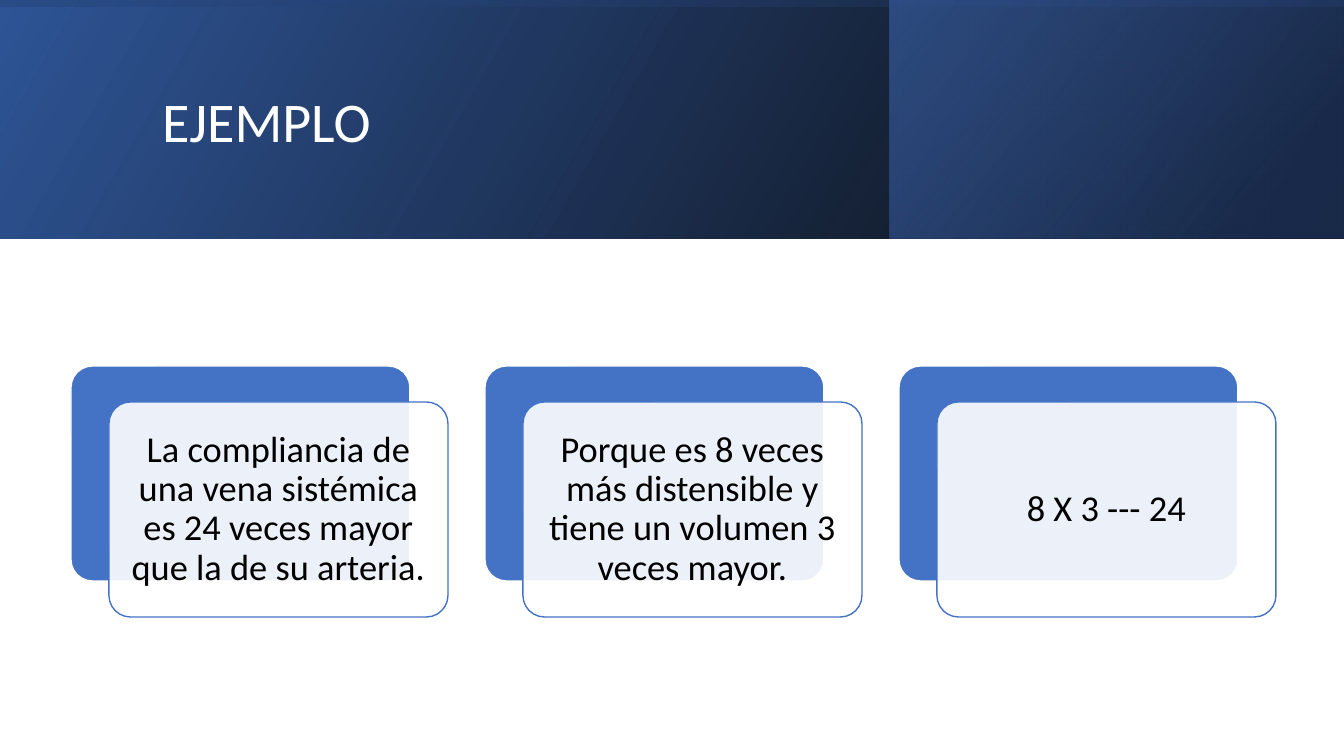
import dataclasses

import pptx
import pptx.dml.color
import pptx.enum.shapes
import pptx.enum.text
import pptx.oxml
import pptx.oxml.ns
import pptx.util

EMU_PER_PX = 914400 / 100.8
SLIDE_W, SLIDE_H = 1344, 756
BANNER_H = 239


@dataclasses.dataclass(frozen=True)
class Theme:
    font: str = "Calibri"
    title_size: int = 40
    body_size: int = 26
    white: str = "FFFFFF"
    black: str = "000000"
    blue: str = "4472C4"
    deep_blue: str = "2F5597"
    navy: str = "203864"


THEME = Theme()


@dataclasses.dataclass(frozen=True)
class Box:
    left: float
    top: float
    width: float
    height: float

    def emu(self) -> list[int]:
        return [px(v) for v in (self.left, self.top, self.width, self.height)]


@dataclasses.dataclass(frozen=True)
class Stop:
    position: int
    color: str
    opacity: int = 100


@dataclasses.dataclass(frozen=True)
class Band:
    box: Box
    angle: int
    stops: tuple[Stop, ...]
    rotation: int = 0


BANDS = (
    Band(Box(0, 0, SLIDE_W, BANNER_H), 330,
         (Stop(0, THEME.black, 96), Stop(100, THEME.deep_blue))),
    Band(Box(890, 0, 453, BANNER_H), 320,
         (Stop(19, THEME.navy, 68), Stop(100, THEME.blue, 48))),
    Band(Box((SLIDE_W - BANNER_H) / 2, (BANNER_H - SLIDE_W) / 2, BANNER_H, SLIDE_W), 350,
         (Stop(23, THEME.deep_blue, 16), Stop(99, THEME.black, 45)), rotation=270),
)

TITLE_BOX = Box(152, 38, 1072, 173)
STATEMENTS = (
    "La compliancia de una vena sistémica es 24 veces mayor que la de su arteria.",
    "Porque es 8 veces más distensible y tiene un volumen 3 veces mayor.",
    "8 X 3 --- 24",
)
CARD_LEFT, CARD_TOP, CARD_W, CARD_H = 71, 366, 339, 215
CARD_PITCH = 414
FRONT_DX, FRONT_DY = 38, 36
CARD_INSET = 11


def px(value: float) -> int:
    return round(value * EMU_PER_PX)


def rgb(color: str) -> pptx.dml.color.RGBColor:
    return pptx.dml.color.RGBColor.from_string(color)


def write(frame, text: str, *, size: int, color: str, align) -> None:
    frame.word_wrap = True
    frame.vertical_anchor = pptx.enum.text.MSO_ANCHOR.MIDDLE
    paragraph = frame.paragraphs[0]
    paragraph.alignment = align
    paragraph.line_spacing = 0.9
    run = paragraph.add_run()
    run.text = text
    run.font.name = THEME.font
    run.font.size = pptx.util.Pt(size)
    run.font.color.rgb = rgb(color)


def draw_band(shapes, band: Band) -> None:
    """Draw a mirrored rectangle with a gradient of translucent stops."""
    rectangle = shapes.add_shape(pptx.enum.shapes.MSO_SHAPE.RECTANGLE, *band.box.emu())
    rectangle.shadow.inherit = False
    rectangle.line.fill.background()
    rectangle.rotation = band.rotation
    properties = rectangle._element.spPr
    properties.xfrm.set("flipH", "1")
    stops = "".join(
        f'<a:gs pos="{s.position * 1000}"><a:srgbClr val="{s.color}">'
        f'<a:alpha val="{s.opacity * 1000}"/></a:srgbClr></a:gs>'
        for s in band.stops
    )
    gradient = pptx.oxml.parse_xml(
        f'<a:gradFill {pptx.oxml.ns.nsdecls("a")} rotWithShape="1"><a:gsLst>{stops}</a:gsLst>'
        f'<a:lin ang="{band.angle * 60000}" scaled="0"/></a:gradFill>'
    )
    properties.find(pptx.oxml.ns.qn("a:prstGeom")).addnext(gradient)


def draw_panel(shapes, box: Box, *, fill: str, line: str, opacity: int = 100):
    panel = shapes.add_shape(pptx.enum.shapes.MSO_SHAPE.ROUNDED_RECTANGLE, *box.emu())
    panel.adjustments[0] = 0.1
    panel.shadow.inherit = False
    panel.fill.solid()
    panel.fill.fore_color.rgb = rgb(fill)
    panel.line.color.rgb = rgb(line)
    panel.line.width = pptx.util.Pt(1)
    if opacity < 100:
        color = panel._element.spPr.find(
            f'{pptx.oxml.ns.qn("a:solidFill")}/{pptx.oxml.ns.qn("a:srgbClr")}')
        color.append(pptx.oxml.parse_xml(
            f'<a:alpha {pptx.oxml.ns.nsdecls("a")} val="{opacity * 1000}"/>'))
    return panel


def draw_card(shapes, left: int, statement: str) -> None:
    """Draw a solid panel and, shifted over it, a translucent one with the statement."""
    draw_panel(shapes, Box(left, CARD_TOP, CARD_W, CARD_H), fill=THEME.blue, line=THEME.white)
    front = draw_panel(
        shapes, Box(left + FRONT_DX, CARD_TOP + FRONT_DY, CARD_W, CARD_H),
        fill=THEME.white, line=THEME.blue, opacity=90)
    frame = front.text_frame
    frame.margin_left = frame.margin_right = px(CARD_INSET)
    frame.margin_top = frame.margin_bottom = px(CARD_INSET)
    write(frame, statement, size=THEME.body_size, color=THEME.black,
          align=pptx.enum.text.PP_ALIGN.CENTER)


def main() -> None:
    deck = pptx.Presentation()
    deck.slide_width, deck.slide_height = px(SLIDE_W), px(SLIDE_H)
    slide = deck.slides.add_slide(deck.slide_layouts.get_by_name("Title Only"))

    for band in BANDS:
        draw_band(slide.shapes, band)

    heading = slide.shapes.title
    heading.left, heading.top, heading.width, heading.height = TITLE_BOX.emu()
    write(heading.text_frame, "EJEMPLO", size=THEME.title_size, color=THEME.white,
          align=pptx.enum.text.PP_ALIGN.LEFT)
    # The bands lie behind the title.
    slide.shapes._spTree.append(heading._element)

    cards = slide.shapes.add_group_shape().shapes
    for index, statement in enumerate(STATEMENTS):
        draw_card(cards, CARD_LEFT + index * CARD_PITCH, statement)

    deck.save("out.pptx")


if __name__ == "__main__":
    main()
